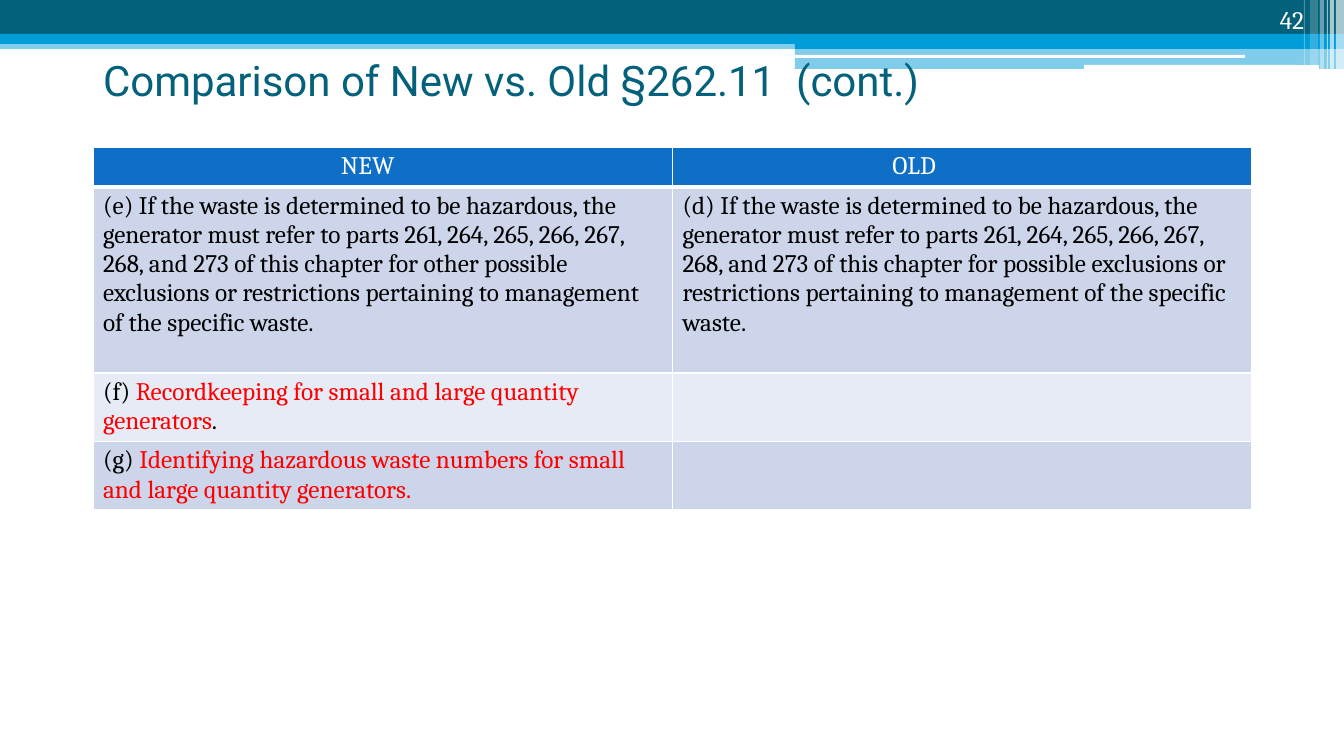
from lxml import etree
from pptx import Presentation
from pptx.dml.color import RGBColor
from pptx.enum.shapes import MSO_SHAPE
from pptx.enum.text import MSO_ANCHOR, MSO_AUTO_SIZE, PP_ALIGN
from pptx.oxml.ns import qn
from pptx.util import Emu, Pt

RECT, ROUNDED = MSO_SHAPE.RECTANGLE, MSO_SHAPE.ROUNDED_RECTANGLE
LEFT, RIGHT = PP_ALIGN.LEFT, PP_ALIGN.RIGHT
MIDDLE, BOTTOM = MSO_ANCHOR.MIDDLE, MSO_ANCHOR.BOTTOM
NO_FIT = MSO_AUTO_SIZE.NONE

TEAL = RGBColor(0x04, 0x61, 0x7B)
SKY = RGBColor(0x00, 0x9D, 0xD9)
BLUE = RGBColor(0x0F, 0x6F, 0xC6)
BAND_DARK = RGBColor(0xCC, 0xD5, 0xEA)
BAND_LIGHT = RGBColor(0xE7, 0xEB, 0xF5)
WHITE = RGBColor(0xFF, 0xFF, 0xFF)
BLACK = RGBColor(0x00, 0x00, 0x00)
RED = RGBColor(0xFF, 0x00, 0x00)

SLIDE_W, SLIDE_H = 1344, 756

# Left, top, width, height, colour, opacity in percent
BANNER_BARS = [
    (0, 40, 1344, 9, SKY, 50),
    (0, 0, 1344, 34, TEAL, 100),
    (0, 34, 1344, 10, SKY, 100),
    (795, 39, 549, 10, SKY, 100),
    (795, 49, 549, 20, SKY, 50),
]
BANNER_LINES = [(794, 55, 451, 3), (1084, 65, 235, 4)]
# Left, width, height, opacity in percent
BANNER_STRIPES = [
    (1336, 8, 69, 65), (1330, 4, 69, 65), (1327, 1, 69, 60),
    (1320, 4, 69, 40), (1310, 8, 65, 20), (1304, 1, 65, 30),
]

HEADINGS = [("NEW", 248), ("OLD", 220)]  # text and its left margin
# Each cell is a list of paragraphs, each paragraph a list of (text, colour)
RULES = [
    ([[("(e) If the waste is determined to be hazardous, the generator must "
        "refer to parts 261, 264, 265, 266, 267, 268, and 273 of this chapter "
        "for other possible", BLACK)],
      [("exclusions or restrictions pertaining to management of the specific "
        "waste.", BLACK)]],
     [[("(d) If the waste is determined to be hazardous, the generator must "
        "refer to parts 261, 264, 265, 266, 267, 268, and 273 of this chapter "
        "for possible exclusions or restrictions pertaining to management of "
        "the specific waste.", BLACK)]]),
    ([[("(f) ", BLACK),
       ("Recordkeeping for small and large quantity generators", RED),
       (".", BLACK)]], []),
    ([[("(g) ", BLACK),
       ("Identifying hazardous waste numbers for small and large quantity "
        "generators.", RED)]], []),
]
ROW_HEIGHTS = [40, 186, 68, 68]


def px(n):
    return Emu(round(n * 914400 / 100.8))


def add_text(p, text, size=18, font="Cambria", color=BLACK, align=LEFT):
    p.alignment = align
    r = p.add_run()
    r.text = text
    r.font.size, r.font.name = Pt(size), font
    r.font.color.rgb = color


def add_bar(slide, x, y, w, h, color, opacity=100, kind=RECT):
    sp = slide.shapes.add_shape(kind, px(x), px(y), px(w), px(h))
    sp.shadow.inherit = False
    sp.line.fill.background()
    sp.fill.solid()
    sp.fill.fore_color.rgb = color
    if opacity < 100:
        clr = sp.fill._xPr.find(qn("a:solidFill"))[0]
        etree.SubElement(clr, qn("a:alpha"), val=str(opacity * 1000))


def set_borders(cell, bottom=1):
    tc_pr = cell._tc.get_or_add_tcPr()
    sides = [("a:lnL", 1), ("a:lnR", 1), ("a:lnT", 1), ("a:lnB", bottom)]
    for i, (side, width) in enumerate(sides):
        ln = etree.Element(qn(side), w=str(Pt(width)))
        fill = etree.SubElement(ln, qn("a:solidFill"))
        etree.SubElement(fill, qn("a:srgbClr"), val=str(WHITE))
        tc_pr.insert(i, ln)


def fill_cell(cell, paragraphs, color, bottom=1):
    cell.fill.solid()
    cell.fill.fore_color.rgb = color
    set_borders(cell, bottom)
    tf = cell.text_frame
    for i, runs in enumerate(paragraphs):
        p = tf.add_paragraph() if i else tf.paragraphs[0]
        for text, text_color in runs:
            add_text(p, text, color=text_color)


def build_banner(slide, x, y):
    for left, top, w, h, color, opacity in BANNER_BARS:
        add_bar(slide, x + left, y + top, w, h, color, opacity)
    for left, top, w, h in BANNER_LINES:
        add_bar(slide, x + left, y + top, w, h, WHITE, kind=ROUNDED)
    for left, w, h, opacity in BANNER_STRIPES:
        add_bar(slide, x + left, y, w, h, WHITE, opacity)


def build_title(slide, x, y, w, h):
    sp = slide.shapes.title
    sp.left, sp.top, sp.width, sp.height = px(x), px(y), px(w), px(h)
    tf = sp.text_frame
    tf.word_wrap, tf.auto_size, tf.vertical_anchor = True, NO_FIT, MIDDLE
    add_text(tf.paragraphs[0], "Comparison of New vs. Old §262.11  (cont.)",
             size=30, font="Roboto", color=TEAL)
    slide.shapes._spTree.append(sp._element)  # in front of the banner


def build_table(slide, x, y, w):
    table = slide.shapes.add_table(len(ROW_HEIGHTS), len(HEADINGS), px(x), px(y),
                                   px(w), px(sum(ROW_HEIGHTS))).table
    for row, height in zip(table.rows, ROW_HEIGHTS):
        row.height = px(height)
    for col, (heading, margin) in enumerate(HEADINGS):
        cell = table.cell(0, col)
        fill_cell(cell, [[(heading, WHITE)]], BLUE, bottom=3)
        cell.margin_left = px(margin)
    for i, rule in enumerate(RULES):
        for col, paragraphs in enumerate(rule):
            band = BAND_LIGHT if i % 2 else BAND_DARK
            fill_cell(table.cell(i + 1, col), paragraphs, band)


def build_page_number(slide, x, y, w, h):
    tf = slide.shapes.add_textbox(px(x), px(y), px(w), px(h)).text_frame
    tf.word_wrap, tf.vertical_anchor = True, BOTTOM
    add_text(tf.paragraphs[0], "42", color=WHITE, align=RIGHT)


def main():
    prs = Presentation()
    prs.slide_width, prs.slide_height = px(SLIDE_W), px(SLIDE_H)
    slide = prs.slides.add_slide(prs.slide_layouts[5])
    build_banner(slide, 0, 0)
    build_title(slide, 93, 24, 1159, 112)
    build_table(slide, 93, 147, 1159)
    build_page_number(slide, 1202, 0, 112, 40)
    prs.save("out.pptx")


if __name__ == "__main__":
    main()
